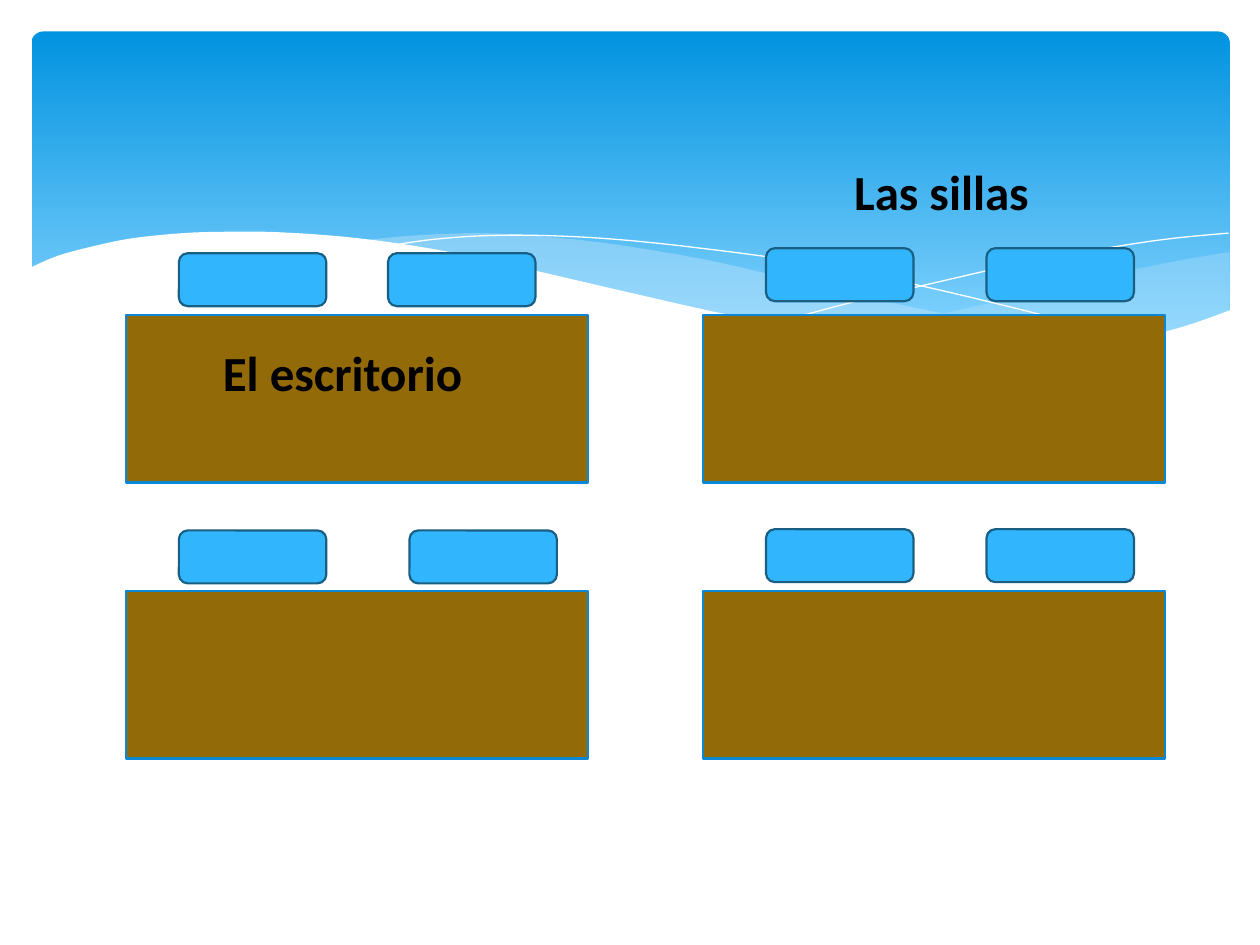
import itertools
from dataclasses import dataclass

import pptx
import pptx.dml.color
import pptx.enum.shapes
import pptx.util
from lxml import etree

COLUMNS, ROWS = 10, 7.5  # square grid cells, one inch each
CELL = pptx.util.Inches(1)
COLORS = {
    "sky_top": "0293E0", "sky_bottom": "83D3FE", "mist": "C6E7FC", "white": "FFFFFF",
    "desk": "936A08", "desk_edge": "0B87D6",
    "chair": "31B6FD", "chair_edge": "195F84", "text": "000000",
}
DESK_SIZE = (3.67, 1.33)
CHAIR_SIZE = (1.17, 0.42)
Point = tuple[float, float]


@dataclass
class Wave:
    curves: list[list[Point]]  # each curve is smoothed, then joined to the next
    fill: str | None = None
    opacity: int = 100


@dataclass
class Desk:
    column: float
    row: float
    chair_offsets: tuple[float, float]
    chair_row: float


WAVES = [
    Wave([[(9.76, 2), (9.35, 2.07), (8.91, 2.16), (8.32, 2.3), (7.79, 2.42),
           (7.29, 2.53), (6.61, 2.65)],
          [(6.61, 2.65), (7.05, 2.71), (7.57, 2.76), (8.03, 2.78), (8.44, 2.77),
           (8.81, 2.73), (9.21, 2.65), (9.49, 2.57), (9.76, 2.47)]], "mist", 29),
    Wave([[(8.93, 2.73), (8.37, 2.65), (7.75, 2.54), (7.06, 2.4), (6.29, 2.22),
           (5.69, 2.08), (5.14, 1.98), (4.65, 1.91), (4.2, 1.87), (3.8, 1.85),
           (3.28, 1.87), (2.86, 1.91)],
          [(2.86, 1.91), (3.42, 1.99), (4.04, 2.11), (4.49, 2.22), (5.3, 2.4),
           (6.01, 2.55), (6.65, 2.66), (7.22, 2.74), (7.73, 2.77), (8.18, 2.78),
           (8.57, 2.77), (8.93, 2.73)]], "mist", 40),
    Wave([[(3.09, 1.95), (3.44, 1.9), (3.87, 1.87), (4.33, 1.87), (4.89, 1.9),
           (5.56, 1.97), (6.36, 2.08), (7.27, 2.26), (8.31, 2.51), (9.07, 2.72)]]),
    Wave([[(6.13, 2.57), (6.72, 2.41), (7.48, 2.23), (8.06, 2.1), (8.66, 1.99),
           (9.24, 1.9), (9.75, 1.85)]]),
    Wave([[(9.77, 2.46), (9.4, 2.59), (8.99, 2.69), (8.5, 2.75), (8.09, 2.77),
           (7.61, 2.75), (7.08, 2.7), (6.48, 2.62), (5.79, 2.5), (5.03, 2.33),
           (4.47, 2.2), (3.91, 2.07), (3.4, 1.97), (2.92, 1.9), (2.5, 1.86),
           (2.11, 1.84), (1.77, 1.84), (1.46, 1.85), (1.06, 1.89), (0.76, 1.95),
           (0.46, 2.03), (0.23, 2.13)],
          [(0.23, 3.29), (9.77, 3.29)]], "white"),
]
DESKS = [
    Desk(1, 4.69, (0.42, 2.25), 4.21),
    Desk(1, 2.5, (0.42, 2.08), 2.01),
    Desk(5.58, 2.5, (0.5, 2.25), 1.97),
    Desk(5.58, 4.69, (0.5, 2.25), 4.2),
]


def cells(*lengths: float) -> list[int]:
    return [round(length * CELL) for length in lengths]


def color(name: str) -> pptx.dml.color.RGBColor:
    return pptx.dml.color.RGBColor.from_string(COLORS[name])


def smooth(points: list[Point], steps: int = 5) -> list[Point]:
    """Run a Catmull-Rom curve through the points."""
    if len(points) < 3:
        return points
    padded = [points[0], *points, points[-1]]
    result = [points[0]]
    for a, b, c, d in zip(padded, padded[1:], padded[2:], padded[3:]):
        for t in (step / steps for step in range(1, steps + 1)):
            result.append(tuple(
                (2 * q + (r - p) * t + (2 * p - 5 * q + 4 * r - s) * t**2
                 + (3 * q - p - 3 * r + s) * t**3) / 2
                for p, q, r, s in zip(a, b, c, d)))
    return result


def add_wave(slide, wave: Wave) -> None:
    curves = (smooth(curve) for curve in wave.curves)
    points = [cells(*point) for point in itertools.chain.from_iterable(curves)]
    builder = slide.shapes.build_freeform(*points[0])
    builder.add_line_segments(points[1:], close=wave.fill is not None)
    shape = builder.convert_to_shape()
    shape.shadow.inherit = False
    if wave.fill is None:
        shape.fill.background()
        shape.line.color.rgb = color("white")
        shape.line.width = pptx.util.Pt(0)
        return
    shape.line.fill.background()
    shape.fill.solid()
    shape.fill.fore_color.rgb = color(wave.fill)
    if wave.opacity < 100:
        tint = shape.fill._xPr.find(".//" + pptx.oxml.ns.qn("a:srgbClr"))
        etree.SubElement(tint, pptx.oxml.ns.qn("a:alpha"), val=str(wave.opacity * 1000))


def add_box(slide, kind: str, position: Point, size: Point, fill: str, edge: str | None = None):
    preset = getattr(pptx.enum.shapes.MSO_SHAPE, kind)
    shape = slide.shapes.add_shape(preset, *cells(*position, *size))
    shape.shadow.inherit = False
    shape.fill.solid()
    shape.fill.fore_color.rgb = color(fill)
    if edge is None:
        shape.line.fill.background()
    else:
        shape.line.color.rgb = color(edge)
        shape.line.width = pptx.util.Pt(1.25)
    return shape


def add_sky(slide) -> None:
    margin = 0.25
    sky = add_box(slide, "ROUNDED_RECTANGLE", (margin, margin), (9.51, 2.7), "sky_top")
    sky.adjustments[0] = 0.034
    sky.fill.gradient()
    sky.fill.gradient_angle = 270
    stops = zip(sky.fill.gradient_stops, ("sky_top", "sky_bottom"), (0, 0.9))
    for stop, name, position in stops:
        stop.color.rgb = color(name)
        stop.position = position


def add_text(slide, text: str, *, position: Point, size: Point, points: int = 28,
             font: str = "Calibri", bold: bool = True, fill: str = "text") -> None:
    frame = slide.shapes.add_textbox(*cells(*position, *size)).text_frame
    frame.word_wrap = True
    run = frame.paragraphs[0].add_run()
    run.text = text
    run.font.name, run.font.size, run.font.bold = font, pptx.util.Pt(points), bold
    run.font.color.rgb = color(fill)


def main() -> None:
    presentation = pptx.Presentation()
    presentation.slide_width, presentation.slide_height = cells(COLUMNS, ROWS)
    slide = presentation.slides.add_slide(presentation.slide_layouts[6])

    # Background sky and waves
    add_sky(slide)
    for wave in WAVES:
        add_wave(slide, wave)

    # Desks, each with two chairs behind it
    for desk in DESKS:
        add_box(slide, "RECTANGLE", (desk.column, desk.row), DESK_SIZE, "desk", "desk_edge")
        for offset in desk.chair_offsets:
            add_box(slide, "ROUNDED_RECTANGLE", (desk.column + offset, desk.chair_row),
                    CHAIR_SIZE, "chair", "chair_edge")

    # Labels
    add_text(slide, "El escritorio", position=(1.67, 2.67), size=(2.75, 0.57))
    add_text(slide, "Las sillas", position=(6.68, 1.23), size=(1.79, 0.57))

    presentation.save("out.pptx")


if __name__ == "__main__":
    main()
